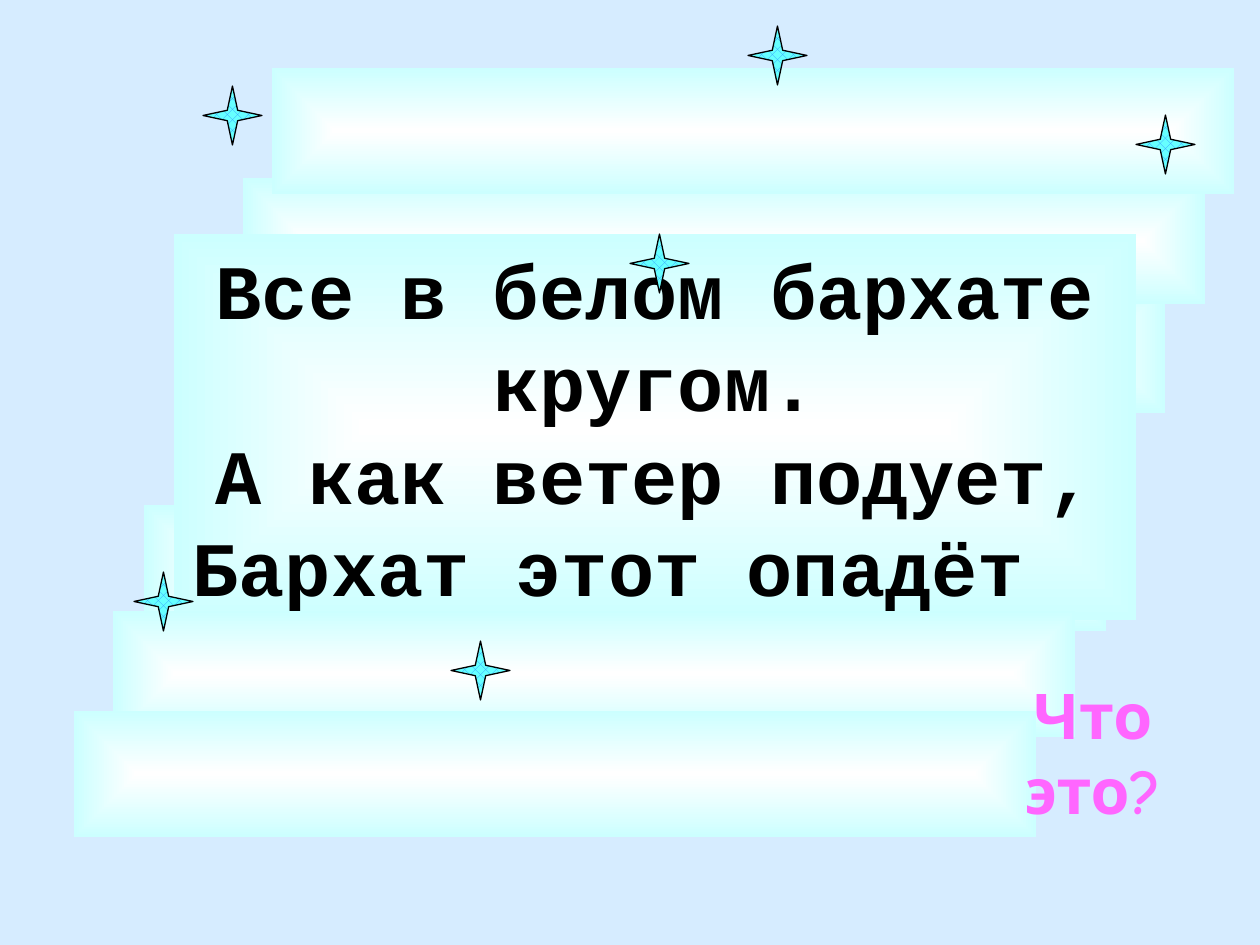
from lxml import etree
from pptx import Presentation
from pptx.dml.color import RGBColor
from pptx.enum.dml import MSO_PATTERN
from pptx.enum.shapes import MSO_SHAPE
from pptx.enum.text import MSO_ANCHOR, MSO_AUTO_SIZE, PP_ALIGN
from pptx.oxml import parse_xml
from pptx.oxml.ns import qn
from pptx.util import Emu, Pt

RECTANGLE = MSO_SHAPE.RECTANGLE
STAR = MSO_SHAPE.STAR_4_POINT
DOTS = MSO_PATTERN.from_xml("pct40")
MIDDLE = MSO_ANCHOR.MIDDLE
GROW = MSO_AUTO_SIZE.SHAPE_TO_FIT_TEXT
CENTER, LEFT = PP_ALIGN.CENTER, PP_ALIGN.LEFT

PX = 914400 / 126
DRAWING_NS = "http://schemas.openxmlformats.org/drawingml/2006/main"

STRIP_SIZE = (962, 126)
STRIPS_BEHIND = [(144, 505), (203, 287), (243, 178), (272, 68)]
STRIPS_IN_FRONT = [(113, 611), (74, 711)]
RIDDLE_BOX = (174, 234, 962, 386)
QUESTION_BOX = (958, 670, 270, 88)
STAR_SIZE = (59, 59)
STARS = [(1136, 115), (451, 641), (203, 86), (134, 572), (630, 234), (748, 26)]

RIDDLE = [
    ("Все в белом бархате кругом.", CENTER, 0),
    ("А как ветер подует,", CENTER, 0),
    ("Бархат этот опадёт", LEFT, 6),
]
RIDDLE_FONT = {"name": "Courier New", "size": Pt(44), "bold": True}
QUESTION_FONT = {"name": "Comic Neue", "size": Pt(36), "bold": True}


def px(length):
    return Emu(round(length * PX))


def paint(color_format, hex_color):
    color_format.rgb = RGBColor.from_string(hex_color)


def style_font(font, settings, hex_color):
    for attribute, value in settings.items():
        setattr(font, attribute, value)
    font.fill.solid()
    paint(font.fill.fore_color, hex_color)


def add_preset(slide, preset, box):
    shape = slide.shapes.add_shape(preset, *map(px, box))
    shape.shadow.inherit = False
    return shape


def add_strip(slide, box):
    """Borderless rectangle glowing from a white centre to pale cyan edges."""
    strip = add_preset(slide, RECTANGLE, box)
    strip.line.fill.background()
    strip.fill.gradient()
    for stop, hex_color in zip(strip.fill.gradient_stops, ("FFFFFF", "CCFFFF")):
        paint(stop.color, hex_color)
    linear = strip._element.spPr.find(qn("a:gradFill")).find(qn("a:lin"))
    linear.getparent().replace(linear, parse_xml(
        f'<a:path xmlns:a="{DRAWING_NS}" path="shape">'
        '<a:fillToRect l="50000" t="50000" r="50000" b="50000"/></a:path>'))
    return strip


def add_riddle(slide, box):
    frame = add_strip(slide, box).text_frame
    frame.word_wrap = True
    frame.auto_size = GROW
    frame.vertical_anchor = MIDDLE
    for index, (verse, alignment, indent) in enumerate(RIDDLE):
        paragraph = frame.add_paragraph() if index else frame.paragraphs[0]
        paragraph.alignment = alignment
        if indent:
            paragraph._p.get_or_add_pPr().set("marL", str(px(indent)))
        run = paragraph.add_run()
        run.text = verse
        style_font(run.font, RIDDLE_FONT, "000000")


def add_star(slide, box):
    star = add_preset(slide, STAR, box)
    star.adjustments[0] = 0.125
    star.fill.patterned()
    star.fill.pattern = DOTS
    paint(star.fill.fore_color, "3399FF")
    paint(star.fill.back_color, "66FFFF")
    paint(star.line.color, "000000")
    star.line.width = Pt(0.75)


def add_question(slide, box):
    frame = slide.shapes.add_textbox(*map(px, box)).text_frame
    frame.word_wrap = False
    paragraph = frame.paragraphs[0]
    paragraph.alignment = CENTER
    run = paragraph.add_run()
    run.text = "Что это?"
    style_font(run.font, QUESTION_FONT, "FF66FF")
    outline = etree.Element(qn("a:ln"), w=str(Pt(1.5)))
    fill = etree.SubElement(outline, qn("a:solidFill"))
    etree.SubElement(fill, qn("a:srgbClr"), val="99CCFF")
    run._r.get_or_add_rPr().insert(0, outline)


def build_riddle_slide(slide):
    slide.background.fill.solid()
    paint(slide.background.fill.fore_color, "D6ECFF")
    for corner in STRIPS_BEHIND:
        add_strip(slide, corner + STRIP_SIZE)
    add_riddle(slide, RIDDLE_BOX)
    for corner in STRIPS_IN_FRONT:
        add_strip(slide, corner + STRIP_SIZE)
    for corner in STARS:
        add_star(slide, corner + STAR_SIZE)
    add_question(slide, QUESTION_BOX)


def main():
    deck = Presentation()
    deck.slide_width, deck.slide_height = px(1260), px(945)
    build_riddle_slide(deck.slides.add_slide(deck.slide_layouts[6]))
    deck.save("out.pptx")


if __name__ == "__main__":
    main()
